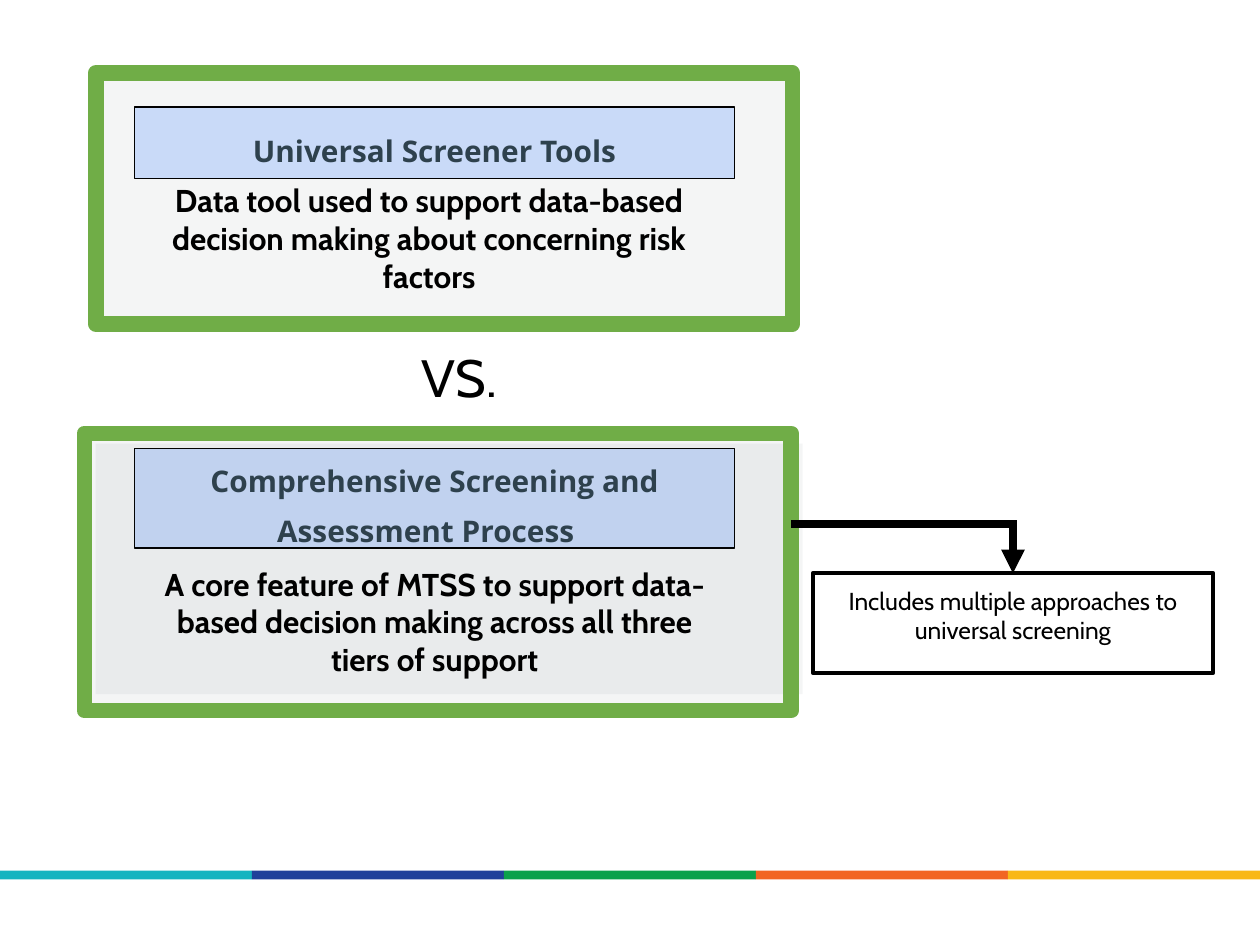
import pptx
import pptx.util
import pptx.dml.color
import pptx.enum.shapes
import pptx.enum.text
import pptx.oxml
import pptx.oxml.ns

Inches = pptx.util.Inches
Pt = pptx.util.Pt
RGBColor = pptx.dml.color.RGBColor
Anchor = pptx.enum.text.MSO_ANCHOR
RECT = pptx.enum.shapes.MSO_SHAPE.RECTANGLE
ELBOW = pptx.enum.shapes.MSO_CONNECTOR.ELBOW
qn = pptx.oxml.ns.qn

SLATE = RGBColor(0x2E, 0x41, 0x4D)
GREEN = RGBColor(0x70, 0xAD, 0x47)
PALE = RGBColor(0xC9, 0xDA, 0xF8)
BLACK = RGBColor(0, 0, 0)
STRIPES = [
    RGBColor(0x14, 0xB4, 0xC0),
    RGBColor(0x20, 0x40, 0x9A),
    RGBColor(0x0B, 0xA1, 0x4B),
    RGBColor(0xF2, 0x65, 0x22),
    RGBColor(0xF9, 0xB8, 0x17),
]

HEAD = {"name": "Open Sans", "size": Pt(17), "bold": True}
BODY = {"name": "Cabin", "size": Pt(18), "bold": True}
VERSUS = {"name": "Cabin", "size": Pt(30), "bold": False}
NOTE = {"name": "Cabin", "size": Pt(14), "bold": False}


def add_sub(parent, tag, **attrs):
    """Append an XML child with the given attributes."""
    child = pptx.oxml.parse_xml(f"<{tag} {pptx.oxml.ns.nsdecls('a')}/>")
    for key, value in attrs.items():
        child.set(key, value)
    parent.append(child)


def add_rect(slide, box, fill=None, line=None, width=0, alpha=None, join=None):
    """Draw a rectangle, with optional fill, tint strength and outline."""
    shape = slide.shapes.add_shape(RECT, *map(Inches, box))
    shape.shadow.inherit = False
    if fill is None:
        shape.fill.background()
    else:
        shape.fill.solid()
        shape.fill.fore_color.rgb = fill
    if alpha is not None:
        color = shape.fill._xPr.find(qn("a:solidFill"))[0]
        add_sub(color, "a:alpha", val=str(alpha * 1000))
    if line is None:
        shape.line.fill.background()
    else:
        shape.line.color.rgb = line
        shape.line.width = Pt(width)
    if join:
        add_sub(shape.line._get_or_add_ln(), join)
    return shape


def set_text(shape, text, font, color=BLACK, anchor=Anchor.TOP, inset=0.1, space=None):
    """Fill a shape with one centred paragraph."""
    frame = shape.text_frame
    pad = Inches(inset)
    layout = {
        "word_wrap": True,
        "vertical_anchor": anchor,
        "margin_left": pad,
        "margin_top": pad,
        "margin_right": pad,
        "margin_bottom": pad,
    }
    for key, value in layout.items():
        setattr(frame, key, value)
    para = frame.paragraphs[0]
    para.alignment = pptx.enum.text.PP_ALIGN.CENTER
    if space:
        para.line_spacing = space
    run = para.add_run()
    run.text = text
    for key, value in font.items():
        setattr(run.font, key, value)
    run.font.color.rgb = color


def add_label(slide, box, text, font, **style):
    label = slide.shapes.add_textbox(*map(Inches, box))
    set_text(label, text, font, **style)


def add_head(slide, box, text, anchor):
    """Draw a blue heading bar."""
    bar = add_rect(slide, box, PALE, BLACK, 0.75)
    set_text(bar, text, HEAD, color=SLATE, anchor=anchor, inset=0, space=1.4)


def add_frame(slide, box):
    """Draw a tinted panel with a thick green border."""
    add_rect(slide, box, SLATE, GREEN, 9, alpha=5, join="a:round")


def add_arrow(slide, start, note):
    """Lead a bent arrow from a point to the top of the note."""
    left, top = map(Inches, start)
    arrow = slide.shapes.add_connector(ELBOW, left, top, left, top)
    arrow.end_connect(note, 0)
    props = arrow._element.spPr
    props.find(qn("a:prstGeom")).set("prst", "bentConnector2")
    arrow.line.color.rgb = BLACK
    arrow.line.width = Pt(4.5)
    line = arrow.line._get_or_add_ln()
    add_sub(line, "a:miter", lim="800000")
    add_sub(line, "a:tailEnd", type="triangle")
    add_sub(props, "a:effectLst")


def main():
    deck = pptx.Presentation()
    deck.slide_width, deck.slide_height = Inches(10), Inches(7.5)
    slide = deck.slides.add_slide(deck.slide_layouts[6])

    # Footer stripes
    for i, color in enumerate(STRIPES):
        add_rect(slide, (2 * i, 6.91, 2, 0.07), color)

    # Screener tools
    add_frame(slide, (0.76, 0.58, 5.53, 1.99))
    add_head(slide, (1.07, 0.85, 4.76, 0.57), "Universal Screener Tools", Anchor.MIDDLE)
    add_label(
        slide, (0.98, 1.37, 4.85, 1.04),
        "Data tool used to support data-based decision making about concerning risk factors",
        BODY, anchor=Anchor.MIDDLE, inset=0,
    )

    # Screening process: the frame's tint lies over the heading
    add_rect(slide, (0.76, 3.52, 5.61, 1.99), SLATE, alpha=5)
    add_head(
        slide, (1.07, 3.56, 4.76, 0.79),
        "Comprehensive Screening and Assessment Process\t", Anchor.TOP,
    )
    add_frame(slide, (0.67, 3.44, 5.61, 2.2))
    add_label(slide, (3.05, 2.64, 1.19, 0.57), "VS.", VERSUS)
    add_label(
        slide, (1.07, 4.52, 4.76, 0.82),
        "A core feature of MTSS to support data-based decision making "
        "across all three tiers of support",
        BODY, anchor=Anchor.MIDDLE,
    )

    # Side note and its arrow
    note = add_rect(slide, (6.45, 4.55, 3.18, 0.79), line=BLACK, width=2.25, join="a:round")
    set_text(note, "Includes multiple approaches to universal screening", NOTE)
    add_arrow(slide, (6.28, 4.16), note)

    deck.save("out.pptx")


if __name__ == "__main__":
    main()
